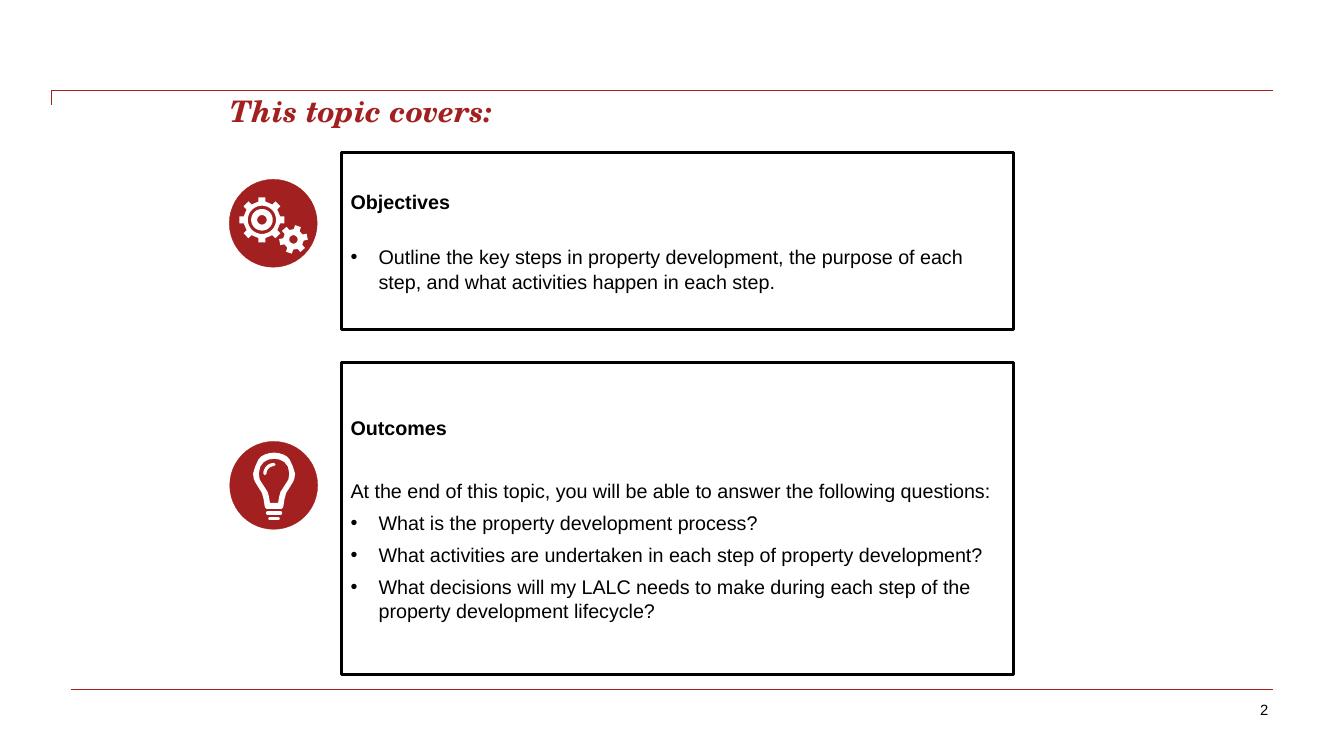
from math import cos, pi, sin

from lxml.etree import SubElement
from pptx import Presentation
from pptx.dml.color import RGBColor
from pptx.enum.shapes import MSO_CONNECTOR as Connector, MSO_SHAPE as Shape
from pptx.enum.text import MSO_ANCHOR as Anchor, PP_ALIGN as Align
from pptx.oxml.ns import qn
from pptx.util import Pt

RED, BLACK, WHITE = "A32020", "000000", "FFFFFF"
BODY = {"size": Pt(14.1), "name": "Arial"}
HEADING = {**BODY, "bold": True}
TITLE = {"size": Pt(21.2), "name": "TeX Gyre Schola", "bold": True, "italic": True}
NUMBER = {"size": Pt(10.6), "name": "Arial"}
LINE = 16.85  # height of one body line
GAP = 5.3  # space between body paragraphs
INDENT = 20
MARGINS = (6.4, 3.2, 6.4, 3.2)

# Right halves of the bulb's outlines, measured from the centre of its disc
BULB_HALVES = [
    [(0, -23.4), (3.6, -22.9), (6.7, -22), (9.3, -20.5), (11.2, -18.4),
     (13.5, -13.3), (15, -8.3), (14.5, -4.7), (13.6, -2.5), (11, 1.8),
     (8.7, 5.4), (7.5, 9.7), (6.7, 14.8), (6.2, 16.2), (5.2, 16.9)],
    [(0, -19), (3.9, -18.4), (7.4, -16.6), (9.9, -13.3), (10.9, -8.3),
     (10.2, -4), (8.2, -0.9), (4.6, 4.7), (3.6, 8.3), (2.9, 12.6)],
    [(4.5, 18.4), (5.5, 18.8), (5.8, 19.8), (5.5, 20.8), (4.5, 21.2)],
    [(2.9, 22.7), (3.8, 23), (4.1, 23.7), (3.8, 24.5), (2.9, 24.8)],
]


def color(value):
    return RGBColor.from_string(value)


def assign(target, values):
    for name, value in values.items():
        setattr(target, name, value)


def arc(x, y, radius, start=0, end=360, steps=36):
    angles = [(start + (end - start) * i / steps) * pi / 180 for i in range(steps + 1)]
    return [(x + radius * cos(a), y + radius * sin(a)) for a in angles]


def gear(x, y, teeth, tip, root, half_width, turn=0):
    """Outline of a gear with straight-sided teeth."""
    points = []
    for tooth in range(teeth):
        angle = (turn + 360 * tooth / teeth) * pi / 180
        for out, side in ((root, -1), (tip, -1), (tip, 1), (root, 1)):
            across = side * half_width
            points.append((x + out * cos(angle) - across * sin(angle),
                           y + out * sin(angle) + across * cos(angle)))
    return points


def bulb(x, y):
    """Outlines of a light bulb with its glint."""
    outlines = [half + [(-dx, dy) for dx, dy in reversed(half)] for half in BULB_HALVES]
    outlines.append(arc(0, -8.3, 7.7, 180, 270, 8) + [(1.1, -14.8)]
                    + arc(0, -8.3, 5.4, 270, 180, 8) + [(-6.5, -7.2)])
    return [[(x + dx, y + dy) for dx, dy in outline] for outline in outlines]


class Page:
    def __init__(self, deck):
        self.slide = deck.slides.add_slide(deck.slide_layouts[6])
        self.shapes = self.slide.shapes

    def paint(self, shape, fill, line=None, width=0):
        shape.shadow.inherit = False
        shape.fill.solid()
        shape.fill.fore_color.rgb = color(fill)
        if line:
            shape.line.color.rgb = color(line)
            shape.line.width = Pt(width)
        else:
            shape.line.fill.background()

    def rule(self, kind, *ends):
        line = self.shapes.add_connector(kind, *map(Pt, ends))
        line.line.color.rgb = color(RED)
        line.line.width = Pt(0.75)
        properties = line._element.spPr
        SubElement(properties, qn("a:effectLst"))
        if kind == Connector.ELBOW:
            guides = properties.find(qn("a:prstGeom")).get_or_add_avLst()
            SubElement(guides, qn("a:gd"), name="adj1", fmla="val 0")

    def disc(self, x, y, radius=31.4):
        circle = self.shapes.add_shape(
            Shape.OVAL, Pt(x - radius), Pt(y - radius), Pt(2 * radius), Pt(2 * radius))
        self.paint(circle, RED, RED, 0.25)

    def cutout(self, outlines):
        """One white shape in which inner outlines become holes."""
        builder = None
        for outline in outlines:
            first, *rest = [(Pt(x), Pt(y)) for x, y in outline]
            if builder is None:
                builder = self.shapes.build_freeform(*first)
            else:
                builder.move_to(*first)
            builder.add_line_segments(rest, close=True)
        self.paint(builder.convert_to_shape(), WHITE)

    def fill_text(self, box, paragraphs, ink=BLACK, anchor=Anchor.MIDDLE, margins=MARGINS):
        """Fill a box with (text, font, paragraph format, bulleted) entries."""
        frame = box.text_frame
        sides = ("margin_left", "margin_top", "margin_right", "margin_bottom")
        assign(frame, dict(zip(sides, map(Pt, margins))))
        assign(frame, {"word_wrap": True, "vertical_anchor": anchor})
        for index, (text, font, layout, bulleted) in enumerate(paragraphs):
            para = frame.add_paragraph() if index else frame.paragraphs[0]
            assign(para, {"alignment": Align.LEFT, **layout})
            span = para.add_run()
            span.text = text
            assign(span.font, font)
            span.font.color.rgb = color(ink)
            if bulleted:
                properties = para._p.get_or_add_pPr()
                properties.set("marL", str(Pt(INDENT)))
                properties.set("indent", str(-Pt(INDENT)))
                SubElement(properties, qn("a:buFont"), typeface="Arial")
                SubElement(properties, qn("a:buChar"), char="•")

    def text(self, place, content, font, layout, **options):
        box = self.shapes.add_textbox(*map(Pt, place))
        self.fill_text(box, [(content, font, layout, False)], **options)

    def panel(self, top, height, heading, heading_gap, intro, bullets):
        box = self.shapes.add_shape(Shape.RECTANGLE, Pt(244.1), Pt(top), Pt(480.2), Pt(height))
        self.paint(box, WHITE, BLACK, 2)
        layout = {"line_spacing": 1.04, "space_before": Pt(GAP)}
        first = {"line_spacing": 1.04, "space_after": Pt(heading_gap)}
        paragraphs = [(heading, HEADING, first, False)]
        paragraphs += [(line, BODY, layout, False) for line in intro]
        paragraphs += [(line, BODY, layout, True) for line in bullets]
        self.fill_text(box, paragraphs)


def main():
    deck = Presentation()
    assign(deck, {"slide_width": Pt(960), "slide_height": Pt(540)})
    page = Page(deck)

    page.rule(Connector.ELBOW, 36.7, 74.9, 909.4, 64.8)
    page.rule(Connector.STRAIGHT, 50.4, 492.5, 909.4, 492.5)
    page.text((164.2, 66.2, 617, 69.8), "This topic covers:", TITLE, {},
              ink=RED, anchor=Anchor.TOP, margins=(0, 0, 0, 0))

    page.disc(195.5, 346.7)
    page.cutout(bulb(195.8, 346.7))
    page.panel(259.2, 222.5, "Outcomes", LINE + GAP,
               ["At the end of this topic, you will be able to answer the following questions:"],
               ["What is the property development process?",
                "What activities are undertaken in each step of property development?",
                "What decisions will my LALC needs to make during each step of the "
                "property development lifecycle?"])

    page.panel(108.7, 126.7, "Objectives", LINE, [],
               ["Outline the key steps in property development, the purpose of each step, "
                "and what activities happen in each step."])
    page.disc(195.2, 159.5)
    large, small = (187.1, 157), (209.6, 171)
    page.cutout([gear(*large, 8, 16.1, 13, 2.5),
                 *(arc(*large, radius) for radius in (10.1, 7.7, 3.4)),
                 gear(*small, 6, 10, 7, 2.2, turn=-11),
                 arc(*small, 3)])

    page.text((650.9, 494.6, 262.1, 25.2), "2", NUMBER, {"alignment": Align.RIGHT},
              margins=(7.2, 3.6, 7.2, 3.6))
    deck.save("out.pptx")


if __name__ == "__main__":
    main()
